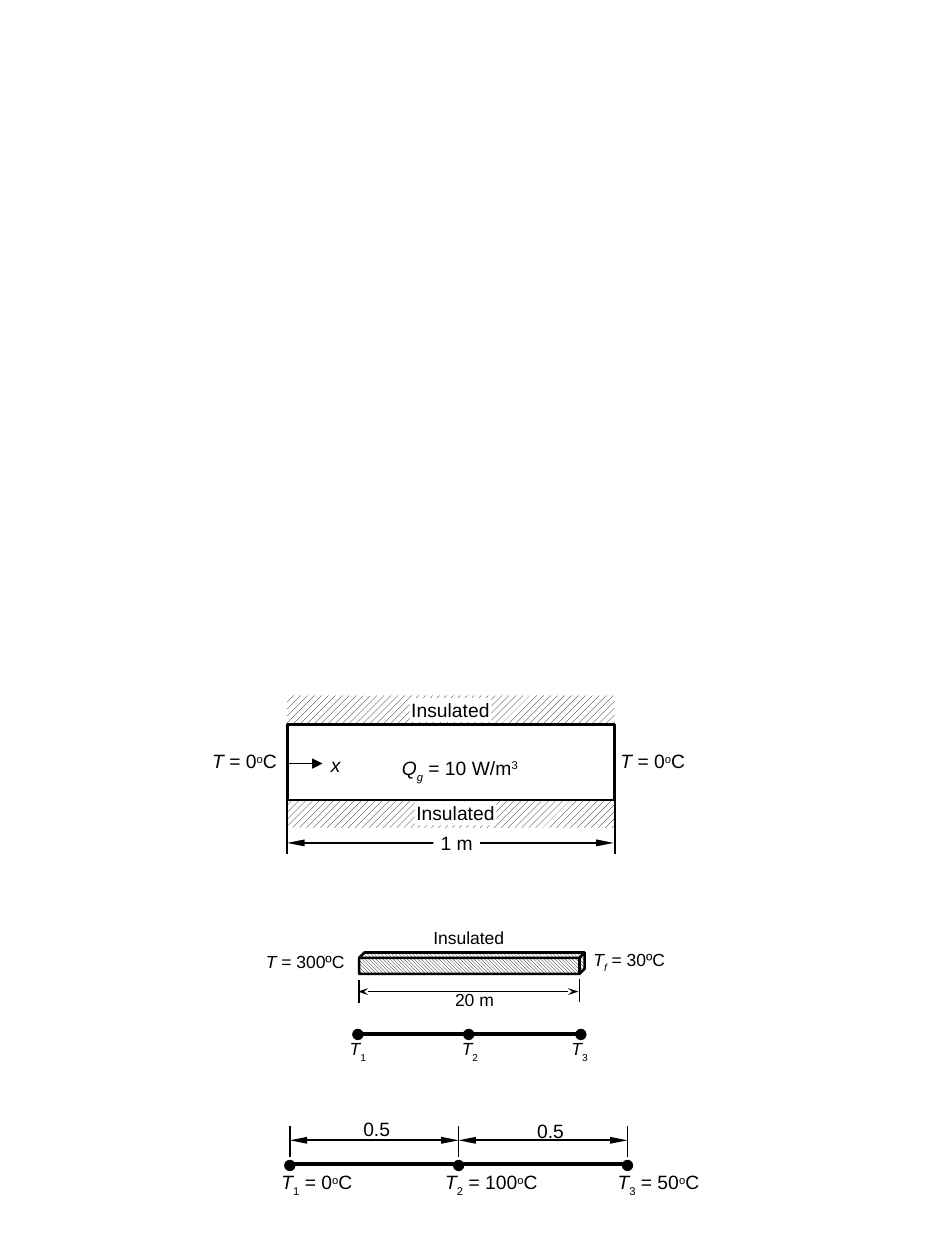
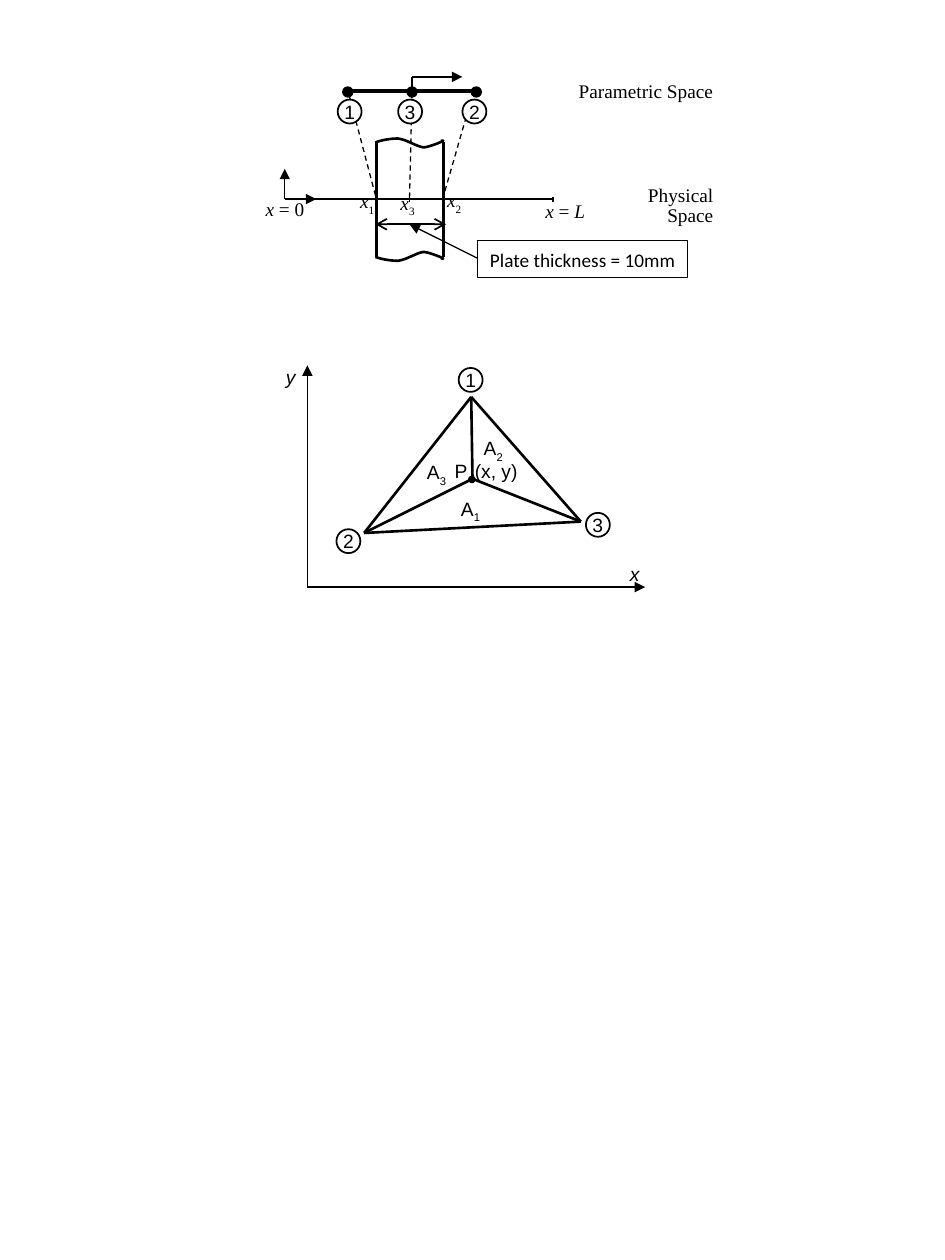
import dataclasses

import lxml.etree
import pptx
import pptx.dml.color
import pptx.enum.dml
import pptx.enum.shapes
import pptx.enum.text
import pptx.oxml.ns
import pptx.util

Inches = pptx.util.Inches
Pt = pptx.util.Pt
SHAPE = pptx.enum.shapes.MSO_SHAPE
PATTERN = pptx.enum.dml.MSO_PATTERN
ALIGN = pptx.enum.text.PP_ALIGN
qn = pptx.oxml.ns.qn


@dataclasses.dataclass(frozen=True)
class Theme:
    ink: pptx.dml.color.RGBColor = pptx.dml.color.RGBColor(0, 0, 0)
    paper: pptx.dml.color.RGBColor = pptx.dml.color.RGBColor(255, 255, 255)
    sans: str = "Arial"
    serif: str = "Times New Roman"
    note: str = "Calibri"
    text: int = 11
    small: int = 10
    hair: float = 0.75
    thin: float = 1
    medium: float = 1.5
    heavy: float = 2.25
    dot: float = 0.08
    node: float = 0.19


theme = Theme()


def rule(slide, x1, y1, x2, y2, weight=theme.thin, head=None, tail=None,
         width="med", length="med", dashed=False):
    connector = slide.shapes.add_connector(
        pptx.enum.shapes.MSO_CONNECTOR.STRAIGHT,
        Inches(x1), Inches(y1), Inches(x2), Inches(y2))
    connector.line.color.rgb = theme.ink
    connector.line.width = Pt(weight)
    if dashed:
        connector.line.dash_style = pptx.enum.dml.MSO_LINE.DASH
    properties = connector._element.spPr
    outline = properties.find(qn("a:ln"))
    for end, arrow in (("a:headEnd", head), ("a:tailEnd", tail)):
        if arrow:
            lxml.etree.SubElement(outline, qn(end), type=arrow, w=width, len=length)
    lxml.etree.SubElement(properties, qn("a:effectLst"))


def put(slide, kind, box, parts=(), fill=None, weight=None, size=theme.text,
        font=theme.sans, align=ALIGN.CENTER, inset=(0, 0), spacing=None):
    place = [Inches(length) for length in box]
    if kind is None:
        item = slide.shapes.add_textbox(*place)
    else:
        item = slide.shapes.add_shape(kind, *place)
        item.shadow.inherit = False
    if fill is None:
        item.fill.background()
    elif fill in (theme.ink, theme.paper):
        item.fill.solid()
        item.fill.fore_color.rgb = fill
    else:
        item.fill.patterned()
        item.fill.pattern = fill
        item.fill.fore_color.rgb = theme.ink
        item.fill.back_color.rgb = theme.paper
    if weight:
        item.line.color.rgb = theme.ink
        item.line.width = Pt(weight)
    else:
        item.line.fill.background()
    if not parts:
        return
    frame = item.text_frame
    frame.word_wrap = align == ALIGN.LEFT
    frame.margin_left = frame.margin_right = Inches(inset[0])
    frame.margin_top = frame.margin_bottom = Inches(inset[1])
    frame.vertical_anchor = (pptx.enum.text.MSO_ANCHOR.MIDDLE if kind == SHAPE.OVAL
                             else pptx.enum.text.MSO_ANCHOR.TOP)
    paragraph = frame.paragraphs[0]
    paragraph.alignment = align
    if spacing:
        paragraph.line_spacing = spacing
    for text, style in [(parts, "")] if isinstance(parts, str) else parts:
        run = paragraph.add_run()
        run.text = text
        run.font.size = Pt(size)
        run.font.name = font
        run.font.color.rgb = theme.ink
        run.font.italic = "i" in style
        for mark, baseline in (("+", "30000"), ("-", "-30000")):
            if mark in style:
                run._r.get_or_add_rPr().set("baseline", baseline)


deck = pptx.Presentation()
deck.slide_width = Inches(7.5)
deck.slide_height = Inches(10)
blank = deck.slide_layouts[6]

bars = deck.slides.add_slide(blank)
long_arrows = dict(head="triangle", tail="triangle", width="sm", length="lg")
T = ("T", "i")
degrees = [("o", "+"), ("C", "")]

for top in (6.34, 5.52):
    put(bars, SHAPE.RECTANGLE, (2.28, top, 2.6, 0.23), fill=PATTERN.WIDE_UPWARD_DIAGONAL)
put(bars, SHAPE.RECTANGLE, (2.28, 5.75, 2.6, 0.6), fill=theme.paper, weight=theme.medium)
for edge in (2.28, 4.88):
    rule(bars, edge, 6.33, edge, 6.78)
rule(bars, 2.28, 6.69, 4.87, 6.69, **long_arrows)
zero = [T, (" = 0", "")] + degrees
for left, top, width, parts in (
    (3.44, 6.6, 0.37, "1 m"),
    (1.68, 5.95, 0.52, zero),
    (4.92, 5.95, 0.52, zero),
    (3.15, 6, 1, [("Q", "i"), ("g", "i-"), (" = 10 W/m", ""), ("3", "+")]),
    (3.25, 5.54, 0.65, "Insulated"),
    (3.29, 6.36, 0.65, "Insulated"),
    (2.58, 5.98, 0.17, [("x", "i")]),
):
    put(bars, SHAPE.RECTANGLE, (left, top, width, 0.19), parts, fill=theme.paper)
rule(bars, 2.29, 6.06, 2.56, 6.06, theme.hair, tail="triangle")

put(bars, SHAPE.CUBE, (2.85, 7.56, 1.79, 0.17), fill=PATTERN.DARK_DOWNWARD_DIAGONAL,
    weight=theme.medium)
for left, top, width, align, parts in (
    (2.11, 7.55, 0.68, ALIGN.LEFT, [T, (" = 300ºC", "")]),
    (4.71, 7.53, 0.66, ALIGN.LEFT, [T, ("f", "i-"), (" = 30ºC", "")]),
    (3.39, 7.36, 0.66, ALIGN.CENTER, "Insulated"),
    (3.59, 7.85, 0.35, ALIGN.CENTER, "20 m"),
    (2.74, 8.24, 0.2, ALIGN.CENTER, [T, ("1", "-")]),
    (3.63, 8.24, 0.2, ALIGN.CENTER, [T, ("2", "-")]),
    (4.5, 8.24, 0.2, ALIGN.CENTER, [T, ("3", "-")]),
):
    put(bars, None, (left, top, width, 0.18), parts, size=theme.small, align=align)
rule(bars, 2.85, 7.78, 2.85, 7.96)
rule(bars, 4.6, 7.77, 4.6, 7.95)
rule(bars, 2.84, 7.87, 4.59, 7.87, head="stealth", tail="stealth", width="sm")

rule(bars, 2.84, 8.21, 4.59, 8.21, theme.heavy)
rule(bars, 2.28, 9.24, 4.98, 9.24, theme.heavy)
for top, lefts in ((8.17, (2.8, 3.68, 4.57)), (9.21, (2.26, 3.6, 4.94))):
    for left in lefts:
        put(bars, SHAPE.OVAL, (left, top, theme.dot, theme.dot), fill=theme.ink,
            weight=theme.hair)

for left, width, index, value in (
    (2.16, 0.71, "1", "0"), (3.51, 0.78, "2", "100"), (4.85, 0.75, "3", "50"),
):
    put(bars, None, (left, 9.29, width, 0.19),
        [T, (index, "-"), (f" = {value}", "")] + degrees)
for tick in (2.3, 3.64, 4.98):
    rule(bars, tick, 9.18, tick, 8.94)
for start, left, top in ((2.3, 2.81, 8.87), (3.64, 4.19, 8.88)):
    rule(bars, start, 9.05, start + 1.34, 9.05, **long_arrows)
    put(bars, None, (left, top, 0.36, 0.19), "0.5")

spaces = deck.slides.add_slide(blank)

first, second, third, point = (3.74, 3.15), (2.89, 4.23), (4.61, 4.14), (3.75, 3.8)
for start, end in ((first, third), (first, second), (third, second),
                   (first, point), (second, point), (third, point)):
    rule(spaces, *start, *end, theme.medium)
for x, y in ((2.44, 2.9), (5.12, 4.66)):
    rule(spaces, 2.44, 4.66, x, y, tail="triangle")
put(spaces, SHAPE.FLOWCHART_CONNECTOR, (3.72, 3.78, 0.05, 0.05), fill=theme.ink,
    weight=theme.hair)
for box, parts in (
    ((4.9, 4.4, 0.33, 0.34), [("x", "i")]),
    ((2.17, 2.84, 0.38, 0.37), [("y", "i")]),
    ((3.51, 3.58, 0.26, 0.3), "P"),
    ((3.67, 3.58, 0.57, 0.26), "(x, y)"),
    ((3.56, 3.88, 0.38, 0.29), [("A", ""), ("1", "-")]),
    ((3.74, 3.4, 0.38, 0.29), [("A", ""), ("2", "-")]),
    ((3.29, 3.59, 0.38, 0.29), [("A", ""), ("3", "-")]),
):
    put(spaces, None, box, parts, align=ALIGN.LEFT, inset=(0.1, 0.05), spacing=1.07)

rule(spaces, 2.76, 0.72, 3.76, 0.72, theme.heavy)
rule(spaces, 2.26, 1.58, 4.39, 1.58, theme.hair)
rule(spaces, 3.27, 0.61, 3.27, 0.75, theme.hair)
rule(spaces, 4.39, 1.56, 4.39, 1.6, theme.hair)
rule(spaces, 3.27, 0.61, 3.67, 0.61, tail="triangle")
for x, y in ((2.26, 1.34), (2.51, 1.58)):
    rule(spaces, 2.26, 1.58, x, y, theme.hair, tail="triangle")
for mapped in (2.99, 3.25, 3.52):
    rule(spaces, mapped, 1.55, mapped, 1.6, theme.hair)
for x1, y1, x2 in ((3.76, 0.72, 3.51), (3.27, 0.74, 3.25), (2.77, 0.75, 2.99)):
    rule(spaces, x1, y1, x2, 1.59, theme.hair, dashed=True)
for box, align, parts in (
    ((2.01, 1.55, 0.6, 0.26), ALIGN.LEFT, [("x", "i"), (" = 0", "")]),
    ((4.23, 1.56, 0.6, 0.26), ALIGN.LEFT, [("x", "i"), (" = ", ""), ("L", "i")]),
    ((2.76, 1.52, 0.33, 0.27), ALIGN.LEFT, [("x", "i"), ("1", "-")]),
    ((3.45, 1.51, 0.33, 0.27), ALIGN.LEFT, [("x", "i"), ("2", "-")]),
    ((3.08, 1.53, 0.33, 0.25), ALIGN.LEFT, [("x", "i"), ("3", "-")]),
    ((4.77, 1.44, 0.99, 0.26), ALIGN.RIGHT, "Physical Space"),
    ((4.26, 0.61, 1.5, 0.26), ALIGN.RIGHT, "Parametric Space"),
):
    put(spaces, None, box, parts, font=theme.serif, align=align, inset=(0.1, 0.05),
        spacing=Pt(11))
for left in (2.72, 3.23, 3.74):
    put(spaces, SHAPE.OVAL, (left, 0.69, theme.dot, theme.dot), fill=theme.ink,
        weight=theme.hair)

put(spaces, SHAPE.RECTANGLE, (3.79, 1.91, 1.67, 0.29), "Plate thickness = 10mm",
    fill=theme.paper, weight=0.5, font=theme.note, align=ALIGN.LEFT, inset=(0.1, 0.05),
    spacing=1.06)
for side in (2.99, 3.52):
    for end in (1.13, 2.04):
        rule(spaces, side, end, side, 1.58, theme.medium)
rule(spaces, 2.98, 1.58, 3.52, 1.58, theme.medium)
rule(spaces, 2.98, 1.78, 3.54, 1.78, head="arrow", tail="arrow")
rule(spaces, 3.79, 2.05, 3.25, 1.78, theme.hair, tail="triangle")

wave = (
    ((2.98, 1.13), (3.04, 1.11), (3.1, 1.1), (3.16, 1.1)),
    ((3.16, 1.1), (3.23, 1.11), (3.3, 1.16), (3.36, 1.17)),
    ((3.36, 1.17), (3.41, 1.17), (3.57, 1.1), (3.5, 1.12)),
)
steps = 12
curve = [(2.98, 1.13)]
for controls in wave:
    for step in range(1, steps + 1):
        t = step / steps
        weights = ((1 - t) ** 3, 3 * t * (1 - t) ** 2, 3 * t ** 2 * (1 - t), t ** 3)
        curve.append(tuple(sum(w * c[axis] for w, c in zip(weights, controls))
                           for axis in (0, 1)))
for outline in (curve, [(x, 3.17 - y) for x, y in curve]):
    points = [(Inches(x), Inches(y)) for x, y in outline]
    builder = spaces.shapes.build_freeform(*points[0])
    builder.add_line_segments(points[1:], close=False)
    break_edge = builder.convert_to_shape()
    break_edge.shadow.inherit = False
    break_edge.fill.background()
    break_edge.line.color.rgb = theme.ink
    break_edge.line.width = Pt(theme.medium)

for number, left, top, fill in (
    ("2", 2.67, 4.2, None), ("1", 3.64, 2.92, None), ("3", 4.65, 4.07, None),
    ("1", 2.68, 0.79, theme.paper), ("2", 3.67, 0.79, theme.paper),
    ("3", 3.16, 0.79, theme.paper),
):
    put(spaces, SHAPE.OVAL, (left, top, theme.node, theme.node), number, fill=fill,
        weight=theme.thin)

deck.save("out.pptx")
